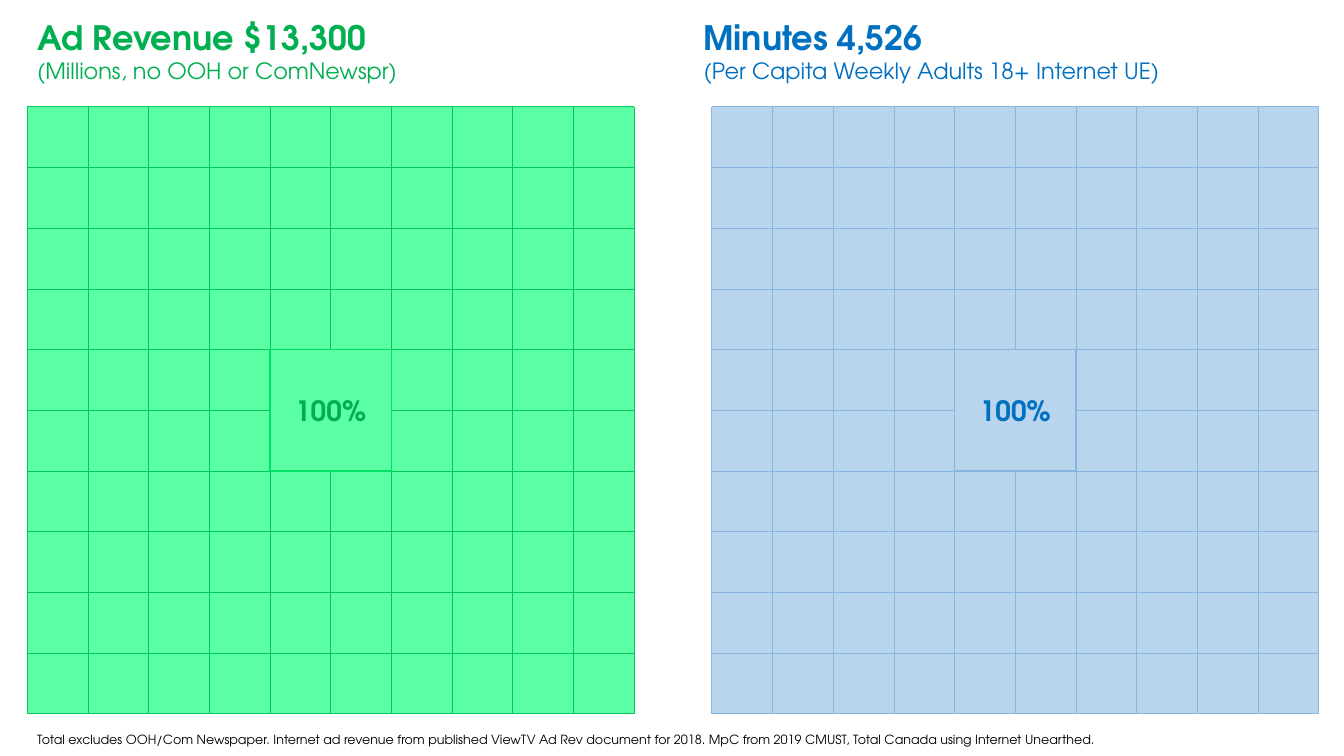
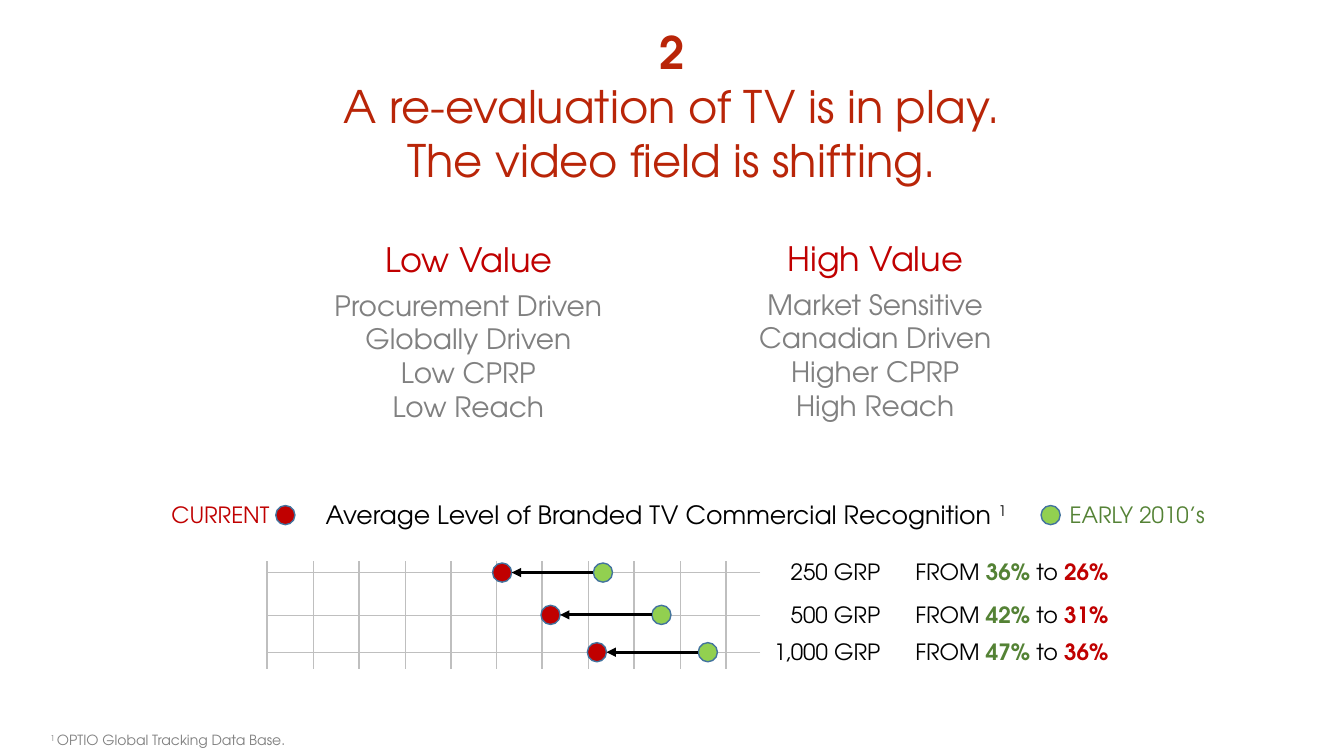
"""Build two slides: media share grids and the shifting value of TV."""
from lxml import etree
from pptx import Presentation
from pptx.dml.color import RGBColor
from pptx.enum.shapes import MSO_CONNECTOR, MSO_SHAPE
from pptx.enum.text import MSO_ANCHOR, MSO_AUTO_SIZE, PP_ALIGN
from pptx.oxml.ns import qn
from pptx.util import Inches, Pt

LEFT, MID, RIGHT = PP_ALIGN.LEFT, PP_ALIGN.CENTER, PP_ALIGN.RIGHT
RECT, OVAL = MSO_SHAPE.RECTANGLE, MSO_SHAPE.OVAL
FONT = "TeX Gyre Adventor"

BLACK = RGBColor(0x00, 0x00, 0x00)
GREY = RGBColor(0x80, 0x80, 0x80)
RULE = RGBColor(0xBF, 0xBF, 0xBF)
GREEN = RGBColor(0x00, 0xB0, 0x50)
MINT = RGBColor(0x5D, 0xFF, 0xA6)
JADE = RGBColor(0x00, 0xC8, 0x5A)
LIME = RGBColor(0x00, 0xE2, 0x66)
BLUE = RGBColor(0x00, 0x70, 0xC0)
PALE = RGBColor(0xB9, 0xD4, 0xED)
SKY = RGBColor(0x88, 0xB6, 0xE0)
BRICK = RGBColor(0xB9, 0x25, 0x08)
RED = RGBColor(0xC0, 0x00, 0x00)
LEAF = RGBColor(0x92, 0xD0, 0x50)
MOSS = RGBColor(0x54, 0x82, 0x35)
EDGE = RGBColor(0x43, 0x73, 0x9E)

SUPER = "super"
TOP, SIDE, CELLS = 1.06, 6.02, 10
CELL = SIDE / CELLS
GRIDS = [
    (0.27, (0.27, 0.12, 3.82, 0.77), False, "Ad Revenue $13,300",
     "(Millions, no OOH or ComNewspr)", GREEN, MINT, JADE, LIME),
    (7.06, (6.88, 0.12, 5.5, 0.77), True, "Minutes 4,526",
     "(Per Capita Weekly Adults 18+ Internet UE)", BLUE, PALE, SKY, SKY),
]
SOURCE = ("Total excludes OOH/Com Newspaper. Internet ad revenue from published "
          "ViewTV Ad Rev document for 2018. MpC from 2019 CMUST, Total Canada "
          "using Internet Unearthed.")

TITLE = [("2", 32, True), ("A re-evaluation of TV is in play.", 32, False),
         ("The video field is shifting.", 32, False)]
VALUES = [
    ("Low Value", (3.51, 2.32, 2.28, 0.5), (2.89, 2.81, 3.51, 1.45),
     ["Procurement Driven", "Globally Driven", "Low CPRP", "Low Reach"]),
    ("High Value", (7.54, 2.31, 2.28, 0.5), (7.04, 2.8, 3.28, 1.45),
     ["Market Sensitive", "Canadian Driven", "Higher CPRP", "High Reach"]),
]
HEAD = [("Average Level of Branded TV Commercial Recognition ", None), ("1", SUPER)]
NOTE = [("1 ", SUPER), ("OPTIO Global Tracking Data Base.", None)]
KEYS = [("CURRENT", (1.58, 4.92, 1.19, 0.37), RIGHT, RED, RED, 2.83),
        ("EARLY 2010’s", (10.51, 4.92, 1.59, 0.37), LEFT, MOSS, LEAF, 10.42)]
ROWS = [("250 GRP", "36%", "26%", 5.98, 4.98, 5.68),
        ("500 GRP", "42%", "31%", 6.56, 5.46, 6.1),
        ("1,000 GRP", "47%", "36%", 7.02, 5.92, 6.47)]
AXIS, STEP, TICKS = 2.65, 0.46, 11
DOT, KEY_Y = 0.19, 5.11


def write(frame, lines, color, align=LEFT):
    """Fill a frame with (text or runs, size, bold) lines."""
    for i, (runs, size, bold) in enumerate(lines):
        para = frame.paragraphs[0] if i == 0 else frame.add_paragraph()
        para.alignment = align
        font = para.font
        font.name, font.size, font.bold = FONT, Pt(size), bold
        font.color.rgb = color
        for text, mark in [(runs, None)] if isinstance(runs, str) else runs:
            run = para.add_run()
            run.text = text
            if mark == SUPER:
                run.font._element.set("baseline", "30000")
            elif mark is not None:
                run.font.bold = True
                run.font.color.rgb = mark


def label(slide, box, lines, color, align=LEFT, wrap=True):
    """Add a text box."""
    frame = slide.shapes.add_textbox(*map(Inches, box)).text_frame
    frame.word_wrap = wrap
    frame.auto_size = MSO_AUTO_SIZE.SHAPE_TO_FIT_TEXT
    write(frame, lines, color, align)


def form(slide, kind, box, fill, edge=None):
    """Add a filled shape with an optional thin edge."""
    shape = slide.shapes.add_shape(kind, *map(Inches, box))
    shape.shadow.inherit = False
    shape.fill.solid()
    shape.fill.fore_color.rgb = fill
    if edge is None:
        shape.line.fill.background()
    else:
        shape.line.color.rgb = edge
        shape.line.width = Pt(1)
    return shape


def dot(slide, x, y, fill):
    """Add a round marker centred on a point."""
    form(slide, OVAL, (x - DOT / 2, y - DOT / 2, DOT, DOT), fill, EDGE)


def rule(slide, ends, color, width, arrow=False):
    """Add a straight line."""
    line = slide.shapes.add_connector(MSO_CONNECTOR.STRAIGHT, *map(Inches, ends))
    line.line.color.rgb = color
    line.line.width = Pt(width)
    if arrow:
        tip = etree.SubElement(line.line._get_or_add_ln(), qn("a:tailEnd"))
        tip.set("type", "triangle")
    etree.SubElement(line._element.spPr, qn("a:effectLst"))


def shares(slide):
    """Draw the two grids of one hundred cells."""
    label(slide, (0.27, 7.21, 11.31, 0.25), [(SOURCE, 9, False)], BLACK)
    for x, box, wrap, name, unit, ink, fill, mesh, edge in GRIDS:
        label(slide, box, [(name, 24, True), (unit, 16, False)], ink, wrap=wrap)
        form(slide, RECT, (x, TOP, SIDE, SIDE), fill)
        for i in range(CELLS + 1):
            gap = i * CELL
            rule(slide, (x, TOP + gap, x + SIDE, TOP + gap), mesh, 0.5)
            rule(slide, (x + gap, TOP + SIDE, x + gap, TOP), mesh, 0.5)
        core = (x + 4 * CELL, TOP + 4 * CELL, 2 * CELL, 2 * CELL)
        frame = form(slide, RECT, core, fill, edge).text_frame
        frame.vertical_anchor = MSO_ANCHOR.MIDDLE
        write(frame, [("100%", 20, True)], ink, MID)


def shift(slide):
    """Draw the value lists and the recognition chart."""
    for i in range(TICKS):
        x = AXIS + i * (STEP - 0.005)
        rule(slide, (x, 5.57, x, 6.64), RULE, 0.25 if i % 2 else 1.5)
    label(slide, (1.56, 0.2, 10.21, 1.72), TITLE, BRICK, MID)
    for name, top, box, items in VALUES:
        label(slide, top, [(name, 24, False)], RED, MID)
        label(slide, box, [(item, 20, False) for item in items], GREY, MID)
    label(slide, (0.4, 7.21, 2.65, 0.27), [(NOTE, 10, False)], GREY)
    label(slide, (3.13, 4.9, 7.08, 0.4), [(HEAD, 18, False)], BLACK, wrap=False)
    for name, box, align, ink, fill, x in KEYS:
        dot(slide, x, KEY_Y, fill)
        label(slide, box, [(name, 16, False)], ink, align, False)
    for name, old, new, start, end, y in ROWS:
        rule(slide, (7.54, y, AXIS, y), RULE, 0.25)
        dot(slide, end, y, RED)
        dot(slide, start, y, LEAF)
        rule(slide, (start - DOT / 2, y, end + DOT / 2, y), BLACK, 2.25, True)
        wide = 1.29 if len(name) > 7 else 1.1
        label(slide, (8.83 - wide, y - DOT, wide, 0.37),
              [(name, 16, False)], BLACK, RIGHT, False)
        runs = [("FROM ", None), (old, MOSS), (" to ", None), (new, RED)]
        label(slide, (8.98, y - DOT, 2.15, 0.37), [(runs, 16, False)], BLACK,
              wrap=False)


def main():
    """Build and save the deck."""
    deck = Presentation()
    deck.slide_width, deck.slide_height = Inches(13.33), Inches(7.5)
    for draw in (shares, shift):
        draw(deck.slides.add_slide(deck.slide_layouts[6]))
    deck.save("out.pptx")


if __name__ == "__main__":
    main()
